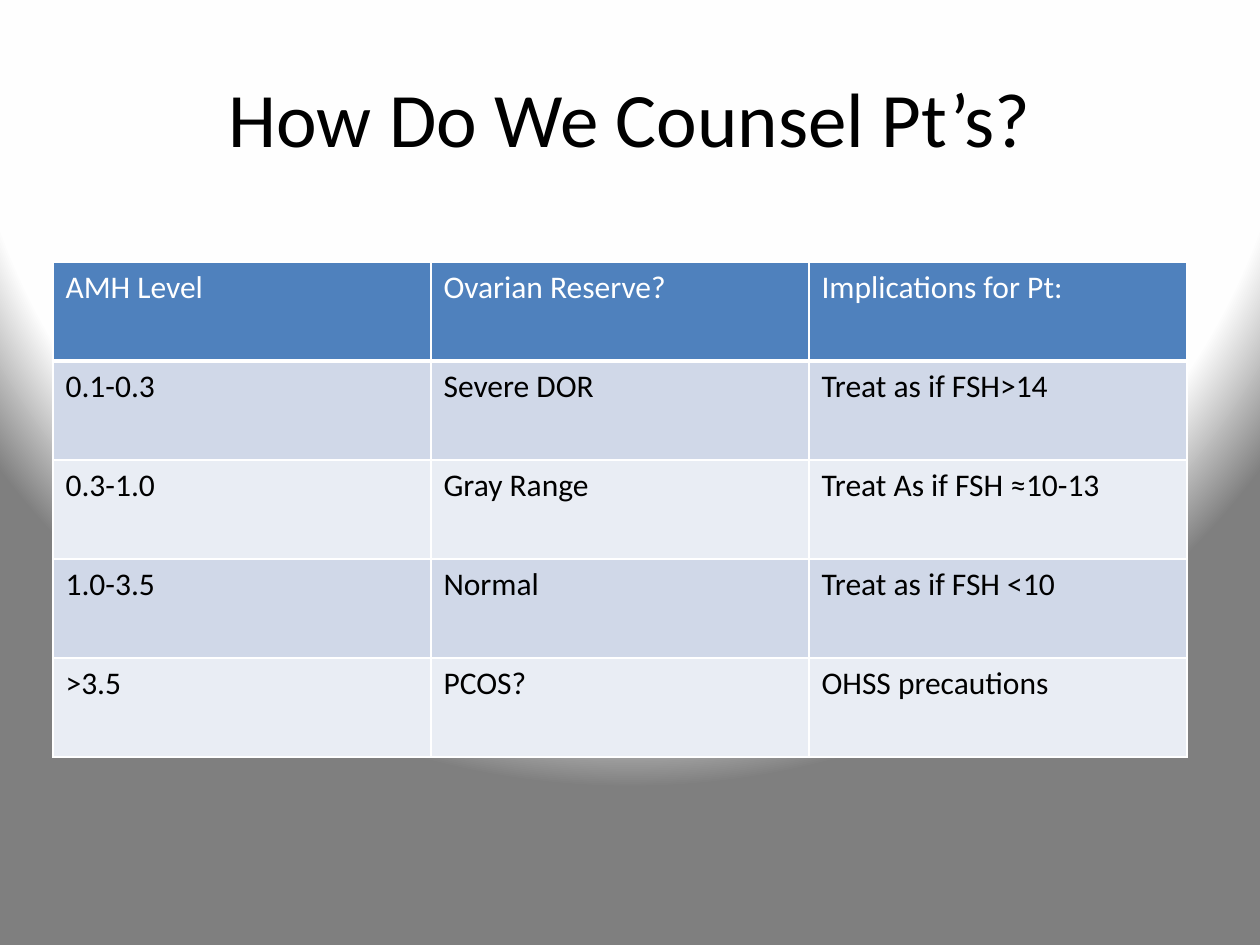
"""Build the AMH counselling slide with its title and table."""
import pptx
import pptx.dml.color
import pptx.enum.text
import pptx.oxml
import pptx.oxml.ns
import pptx.util

PX = pptx.util.Inches(1) / 126
NS = pptx.oxml.ns.nsdecls("a")
ROWS = [
    ("AMH Level", "Ovarian Reserve?", "Implications for Pt:"),
    ("0.1-0.3", "Severe DOR", "Treat as if FSH>14"),
    ("0.3-1.0", "Gray Range", "Treat As if FSH ≈10-13"),
    ("1.0-3.5", "Normal", "Treat as if FSH <10"),
    (">3.5", "PCOS?", "OHSS precautions"),
]


def px(*lengths):
    return [round(length * PX) for length in lengths]


def add_span(para, text, size, color):
    span = para.add_run()
    span.text = text
    span.font.name = "Calibri"
    span.font.size = pptx.util.Pt(size)
    span.font.color.rgb = pptx.dml.color.RGBColor.from_string(color)


deck = pptx.Presentation()
deck.slide_width, deck.slide_height = px(1260, 945)
page = deck.slides.add_slide(deck.slide_layouts[5])

page.background.fill.solid()
solid = page.element.xpath(".//p:bgPr/a:solidFill")[0]
stops = "".join(
    f'<a:gs pos="{percent * 1000}"><a:srgbClr val="{color}"/></a:gs>'
    for percent, color in [(0, "FFFFFF"), (85, "FEFEFE"), (100, "7F7F7F")]
)
solid.getparent().replace(solid, pptx.oxml.parse_xml(
    f'<a:gradFill {NS} rotWithShape="1"><a:gsLst>{stops}</a:gsLst>'
    '<a:path path="circle"><a:fillToRect l="50000" t="-80000" r="50000" b="180000"/></a:path>'
    "</a:gradFill>"
))

title = page.shapes.title
title.left, title.top, title.width, title.height = px(63, 38, 1134, 157)
title.text_frame.vertical_anchor = pptx.enum.text.MSO_ANCHOR.MIDDLE
heading = title.text_frame.paragraphs[0]
heading.alignment = pptx.enum.text.PP_ALIGN.CENTER
add_span(heading, "How Do We Counsel Pt’s?", 44, "000000")

table = page.shapes.add_table(len(ROWS), 3, *px(53, 262, 1134, 495)).table
for row_index, texts in enumerate(ROWS):
    header = row_index == 0
    fill = "4F81BD" if header else ("E9EDF4", "D0D8E8")[row_index % 2]
    for column_index, text in enumerate(texts):
        cell = table.cell(row_index, column_index)
        cell.fill.solid()
        cell.fill.fore_color.rgb = pptx.dml.color.RGBColor.from_string(fill)
        add_span(cell.text_frame.paragraphs[0], text, 18, "FFFFFF" if header else "000000")
        for position, side in enumerate("LRTB"):
            width = pptx.util.Pt(3 if header and side == "B" else 1)
            cell.fill._xPr.insert(position, pptx.oxml.parse_xml(
                f'<a:ln{side} {NS} w="{width}"><a:solidFill><a:srgbClr val="FFFFFF"/>'
                f"</a:solidFill></a:ln{side}>"
            ))

deck.save("out.pptx")
